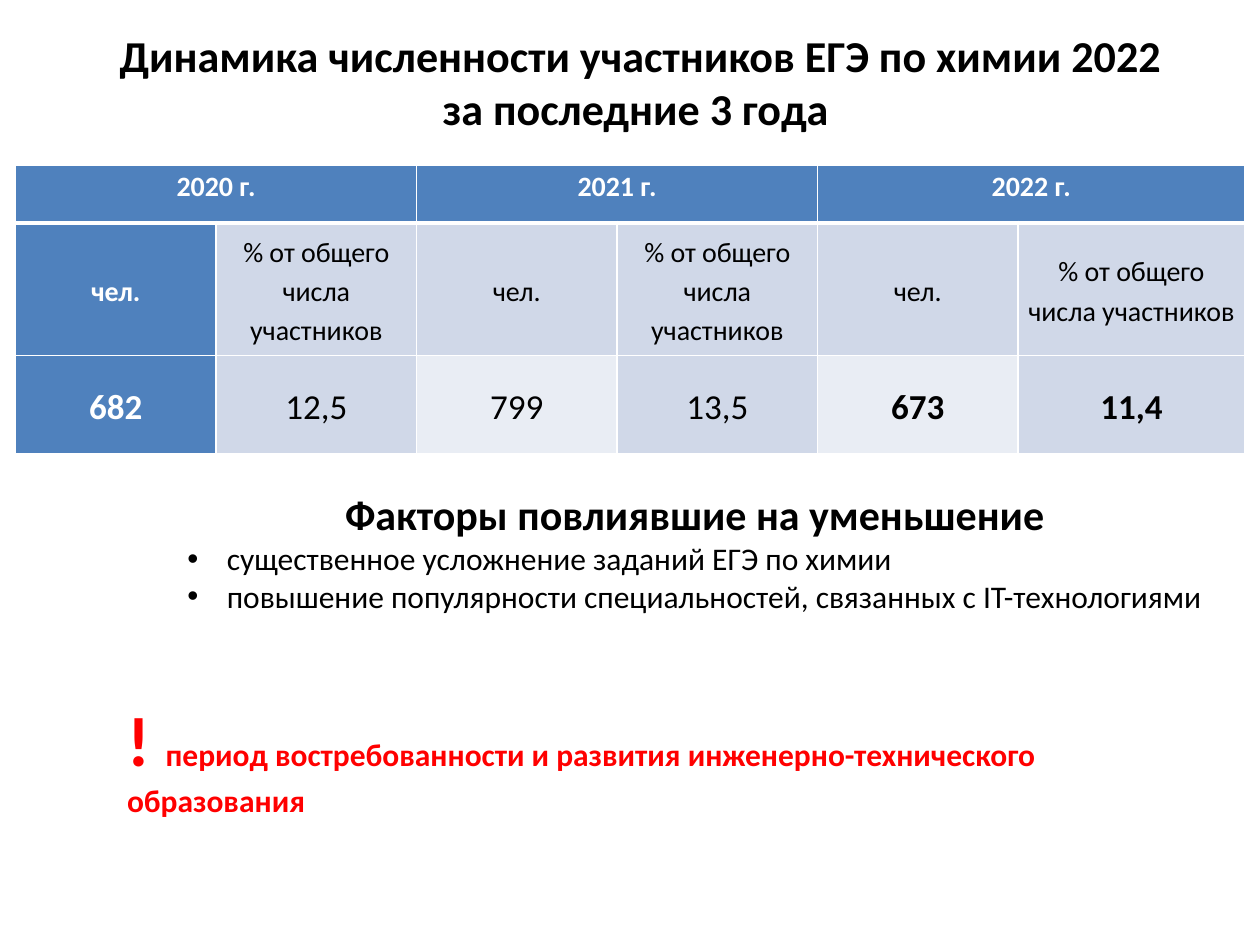
from dataclasses import dataclass
from typing import Optional

from lxml.etree import SubElement
from pptx import Presentation
from pptx.dml.color import RGBColor
from pptx.enum.text import MSO_ANCHOR as Anchor, PP_ALIGN as Align
from pptx.oxml import parse_xml
from pptx.oxml.ns import nsdecls, qn
from pptx.util import Pt

FONT = "Calibri"
BLACK, WHITE, RED = "000000", "FFFFFF", "FF0000"
BLUE, PALE, PALER = "4F81BD", "D0D8E8", "E9EDF4"
COLUMNS = [114.6] * 5 + [129.6]
ROWS = [33.1, 75.6, 56.2]
YEARS = ["2020 г.", "2021 г.", "2022 г."]
VALUES = ["682", "12,5", "799", "13,5", "673", "11,4"]


@dataclass
class Span:
    text: str
    size: float
    bold: bool = False
    color: str = BLACK


@dataclass
class Para:
    spans: list[Span]
    align: Align = Align.LEFT
    bullet: bool = False
    spacing: Optional[float] = None


@dataclass
class Box:
    left: float
    top: float
    width: float
    height: float
    paras: list[Para]
    anchor: Anchor = Anchor.TOP


def rgb(color: str) -> RGBColor:
    return RGBColor.from_string(color)


def write_para(target, para: Para) -> None:
    target.alignment = para.align
    if para.spacing:
        target.line_spacing = para.spacing
    if para.bullet:
        properties = target._p.get_or_add_pPr()
        properties.set("marL", str(Pt(22.5)))
        properties.set("indent", str(-Pt(22.5)))
        SubElement(properties, qn("a:buFont"), typeface="Arial")
        SubElement(properties, qn("a:buChar"), char="•")
    for span in para.spans:
        for index, line in enumerate(span.text.split("\n")):
            if index:
                target.add_line_break()
            run = target.add_run()
            run.text = line
            formats = {"name": FONT, "size": Pt(span.size), "bold": span.bold}
            for name, value in formats.items():
                setattr(run.font, name, value)
            run.font.color.rgb = rgb(span.color)


def draw_box(page, box: Box) -> None:
    places = (Pt(value) for value in (box.left, box.top, box.width, box.height))
    frame = page.shapes.add_textbox(*places).text_frame
    frame.word_wrap = True
    frame.vertical_anchor = box.anchor
    for index, para in enumerate(box.paras):
        write_para(frame.add_paragraph() if index else frame.paragraphs[0], para)


def draw_borders(cell, widths: dict[str, float]) -> None:
    properties = cell._tc.get_or_add_tcPr()
    for index, (side, width) in enumerate(widths.items()):
        properties.insert(index, parse_xml(
            f'<a:{side} {nsdecls("a")} w="{Pt(width)}"><a:solidFill>'
            f'<a:srgbClr val="{WHITE}"/></a:solidFill></a:{side}>'))


def style_cell(cell, fill: str, anchor: Anchor, top: float, bottom: float) -> None:
    formats = {"margin_left": Pt(5), "margin_right": Pt(5), "margin_top": Pt(0),
               "margin_bottom": Pt(0), "vertical_anchor": anchor}
    for name, value in formats.items():
        setattr(cell, name, value)
    cell.fill.solid()
    cell.fill.fore_color.rgb = rgb(fill)
    draw_borders(cell, {"lnL": 1, "lnR": 1, "lnT": top, "lnB": bottom})


def write_cell(cell, span: Span) -> None:
    write_para(cell.text_frame.paragraphs[0], Para([span], Align.CENTER, spacing=1.15))


def draw_table(page) -> None:
    table = page.shapes.add_table(len(ROWS), len(COLUMNS), Pt(8.9), Pt(94.4),
                                  Pt(sum(COLUMNS)), Pt(sum(ROWS))).table
    for column, width in zip(table.columns, COLUMNS):
        column.width = Pt(width)
    for row, height in zip(table.rows, ROWS):
        row.height = Pt(height)
    for index, value in enumerate(VALUES):
        first, share = index == 0, index % 2 == 1
        color = WHITE if first else BLACK
        label = "% от общего числа участников" if share else "чел."
        value_fill = BLUE if first else PALE if share else PALER
        header, caption, figure = (table.cell(row, index) for row in range(3))
        style_cell(header, BLUE, Anchor.TOP, 1, 3)
        style_cell(caption, BLUE if first else PALE, Anchor.MIDDLE, 3, 1)
        style_cell(figure, value_fill, Anchor.MIDDLE, 1, 1)
        write_cell(caption, Span(label, 16, first, color))
        write_cell(figure, Span(value, 20, first or index >= 4, color))
    for index, year in enumerate(YEARS):
        header = table.cell(0, 2 * index)
        header.merge(table.cell(0, 2 * index + 1))
        write_cell(header, Span(year, 16, True, WHITE))


TITLE = Box(48.2, 21.6, 635.8, 49.7, [
    Para([Span("Динамика численности участников ЕГЭ по химии 2022\n"
               "за последние 3 года ", 25.2, True)], Align.CENTER),
], Anchor.MIDDLE)
FACTORS = Box(100, 275.8, 594, 101.5, [
    Para([Span("Факторы повлиявшие на уменьшение", 24, True)], Align.CENTER),
    Para([Span("существенное усложнение заданий ЕГЭ по химии", 18)], bullet=True),
    Para([Span("повышение популярности специальностей, связанных с IT-технологиями", 18)],
         bullet=True),
])
NOTICE = Box(65.5, 394.6, 635, 77.8, [
    Para([Span("! ", 40, True, RED),
          Span("период востребованности и развития инженерно-технического образования",
               18, True, RED)]),
])


def main() -> None:
    deck = Presentation()
    deck.slide_width, deck.slide_height = Pt(720), Pt(540)
    page = deck.slides.add_slide(deck.slide_layouts[6])
    draw_box(page, TITLE)
    draw_table(page)
    draw_box(page, FACTORS)
    draw_box(page, NOTICE)
    deck.save("out.pptx")


if __name__ == "__main__":
    main()
